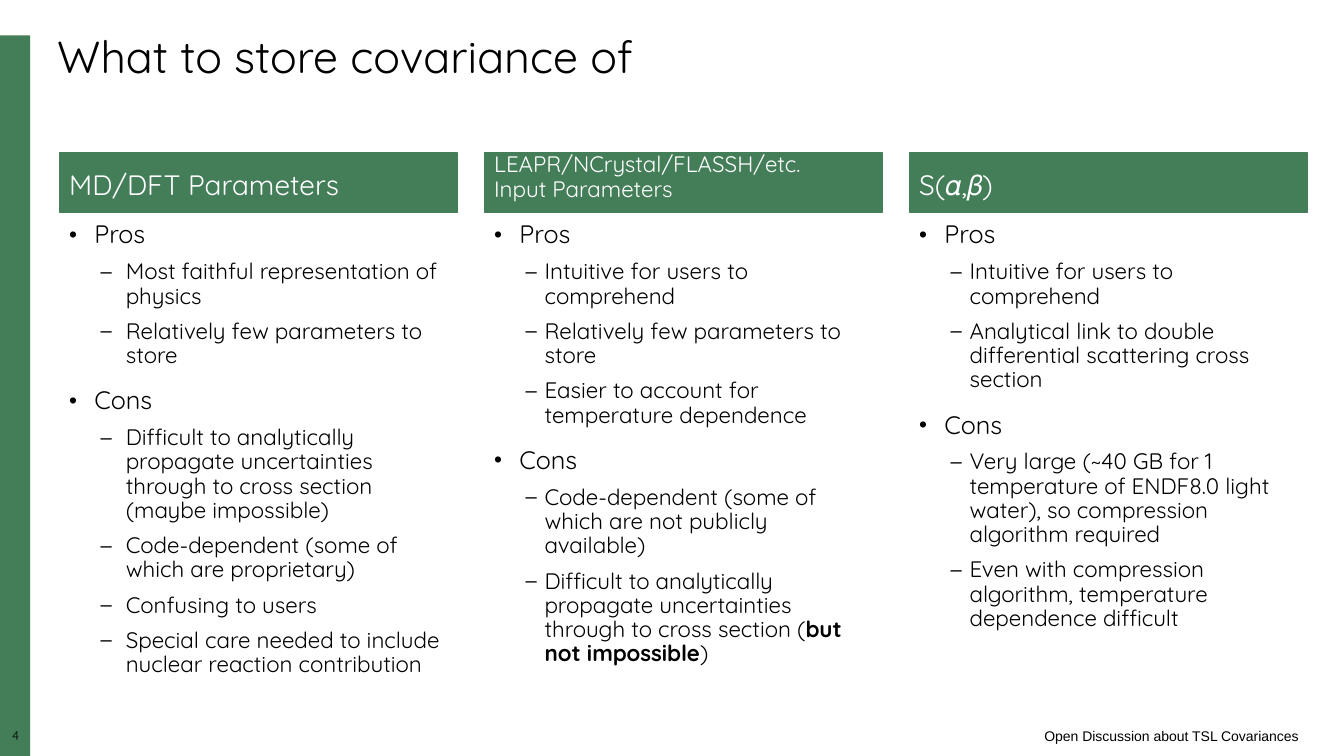
from dataclasses import dataclass

from lxml.etree import SubElement
from pptx import Presentation
from pptx.dml.color import RGBColor
from pptx.enum.shapes import MSO_SHAPE
from pptx.enum.text import MSO_ANCHOR, PP_ALIGN
from pptx.oxml.ns import qn
from pptx.util import Pt

RECT = MSO_SHAPE.RECTANGLE
TOP, MIDDLE, BOTTOM = MSO_ANCHOR.TOP, MSO_ANCHOR.MIDDLE, MSO_ANCHOR.BOTTOM
LEFT, CENTER, RIGHT = PP_ALIGN.LEFT, PP_ALIGN.CENTER, PP_ALIGN.RIGHT


@dataclass(frozen=True)
class Theme:
    """Colours, fonts and type sizes of the slide."""
    green: str = "447E59"
    black: str = "000000"
    white: str = "FFFFFF"
    font: str = "Quicksand"
    plain: str = "Arial"
    title: int = 32
    head: int = 20
    point: int = 18
    detail: int = 16
    foot: int = 10
    page: int = 9


def assign(target, values):
    """Set each named value on the target."""
    for name, value in values.items():
        setattr(target, name, value)


class Board:
    """Draws styled elements on the current slide."""

    def __init__(self, slide, theme):
        self.slide = slide
        self.theme = theme

    def bar(self, box, edge=False):
        """Add a green rectangle, with an outline if asked."""
        shape = self.slide.shapes.add_shape(RECT, *map(Pt, box))
        shape.shadow.inherit = False
        color = RGBColor.from_string(self.theme.green)
        shape.fill.solid()
        shape.fill.fore_color.rgb = color
        if edge:
            shape.line.color.rgb = color
            shape.line.width = Pt(1)
        else:
            shape.line.fill.background()
        return shape

    def frame(self, shape, inset, anchor):
        """Prepare the text frame of a shape."""
        side, top = map(Pt, inset)
        frame = shape.text_frame
        assign(frame, {"word_wrap": True, "vertical_anchor": anchor,
                       "margin_left": side, "margin_right": side,
                       "margin_top": top, "margin_bottom": top})
        return frame

    def letter(self, para, text, size, color, font=None, align=LEFT,
               space=0.9):
        """Fill a paragraph; stars enclose bold words."""
        assign(para, {"alignment": align, "line_spacing": space})
        for index, part in enumerate(text.split("*")):
            for row, line in enumerate(part.split("\n")):
                if row:
                    para.add_line_break()
                run = para.add_run()
                run.text = line
                assign(run.font, {"size": Pt(size), "bold": index % 2 == 1,
                                  "name": font or self.theme.font})
                run.font.color.rgb = RGBColor.from_string(color)
        for gap in para._p.findall(qn("a:br")):
            SubElement(gap, qn("a:rPr"), sz=str(size * 100))

    def label(self, box, text, size, inset=(7.2, 3.6), anchor=TOP, **style):
        """Add a text box of one paragraph."""
        shape = self.slide.shapes.add_textbox(*map(Pt, box))
        para = self.frame(shape, inset, anchor).paragraphs[0]
        self.letter(para, text, size, self.theme.black, **style)

    def header(self, box, text, size):
        """Add a green column header."""
        frame = self.frame(self.bar(box, edge=True), (7.2, 7.2), BOTTOM)
        self.letter(frame.paragraphs[0], text, size, self.theme.white)

    def bullet(self, para, mark, margin, hang):
        """Give a paragraph its bullet and indent."""
        props = para._p.get_or_add_pPr()
        props.set("marL", str(Pt(margin)))
        props.set("indent", str(-Pt(hang)))
        color = SubElement(props, qn("a:buClr"))
        SubElement(color, qn("a:srgbClr"), val=self.theme.black)
        SubElement(props, qn("a:buSzPct"), val="90000")
        SubElement(props, qn("a:buFont"), typeface=self.theme.plain)
        SubElement(props, qn("a:buChar"), char=mark)

    def outline(self, box, groups, indent):
        """Add a two-level bullet list."""
        theme = self.theme
        shape = self.slide.shapes.add_textbox(*map(Pt, box))
        frame = self.frame(shape, (7.2, 7.2), TOP)
        rows = []
        for name, items in groups.items():
            rows += [(0, name)] + [(1, item) for item in items]
        levels = [("•", (18, 18), theme.point, 14),
                  ("–", indent, theme.detail, 8)]
        for index, (level, text) in enumerate(rows):
            mark, inset, size, before = levels[level]
            para = frame.add_paragraph() if index else frame.paragraphs[0]
            assign(para, {"level": level,
                          "space_before": Pt(before if index else 0)})
            self.bullet(para, mark, *inset)
            self.letter(para, text, size, theme.black)


THEME = Theme()
WIDE, TIGHT = (40.5, 18), (36, 13.5)
COLUMNS = [
    ("MD/DFT Parameters", THEME.head, WIDE, {
        "Pros": ["Most faithful representation of physics",
                 "Relatively few parameters to store"],
        "Cons": ["Difficult to analytically propagate uncertainties through "
                 "to cross section (maybe impossible)",
                 "Code-dependent (some of which are proprietary)",
                 "Confusing to users",
                 "Special care needed to include nuclear reaction "
                 "contribution"]}),
    ("LEAPR/NCrystal/FLASSH/etc.\nInput Parameters", THEME.detail, TIGHT, {
        "Pros": ["Intuitive for users to comprehend",
                 "Relatively few parameters to store",
                 "Easier to account for temperature dependence"],
        "Cons": ["Code-dependent (some of which are not publicly available)",
                 "Difficult to analytically propagate uncertainties through "
                 "to cross section (*but not impossible*)"]}),
    ("S(𝛼,𝛽)", THEME.head, TIGHT, {
        "Pros": ["Intuitive for users to comprehend",
                 "Analytical link to double differential scattering cross "
                 "section"],
        "Cons": ["Very large (~40 GB for 1 temperature of ENDF8.0 light "
                 "water), so compression algorithm required",
                 "Even with compression algorithm, temperature dependence "
                 "difficult"]}),
]


def main():
    """Build and save the slide."""
    deck = Presentation()
    assign(deck, {"slide_width": Pt(960), "slide_height": Pt(540)})
    board = Board(deck.slides.add_slide(deck.slide_layouts[6]), THEME)
    board.bar((0, 25.2, 21.6, 514.8))
    board.label((0, 521.3, 22.3, 12.2), "4", THEME.page, (0, 0), align=CENTER)
    board.label((449.3, 518.4, 485.3, 14.4),
                "Open Discussion about TSL Covariances", THEME.foot,
                anchor=MIDDLE, font=THEME.plain, align=RIGHT, space=1.0)
    board.label((33.8, 21.6, 905.8, 42.5), "What to store covariance of",
                THEME.title)
    for index, (name, size, indent, groups) in enumerate(COLUMNS):
        left = 42.3 + 303.6 * index
        board.header((left, 109.2, 284.4, 42.3), name, size)
        board.outline((left, 151.5, 284.4, 323.3), groups, indent)
    deck.save("out.pptx")


if __name__ == "__main__":
    main()
